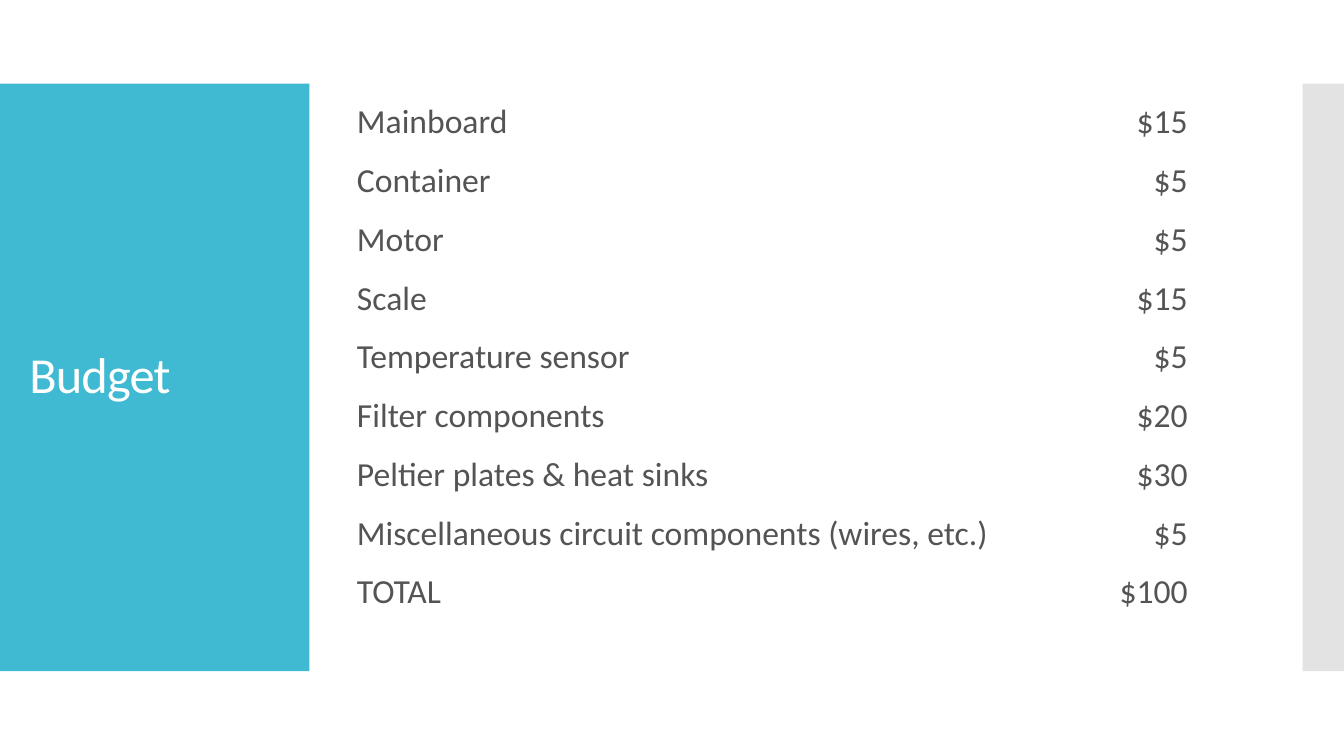
"""Build the project budget slide."""
from lxml.etree import SubElement
from pptx import Presentation
from pptx.dml.color import RGBColor
from pptx.enum.shapes import MSO_SHAPE
from pptx.enum.text import MSO_ANCHOR, PP_ALIGN
from pptx.oxml.ns import qn
from pptx.util import Inches, Pt

TEAL = RGBColor(0x40, 0xBA, 0xD2)
GRAY = RGBColor(0xC8, 0xC8, 0xC8)
WHITE = RGBColor(0xFF, 0xFF, 0xFF)
TEXT = RGBColor(0x54, 0x54, 0x54)

BUDGET = [
    ("Mainboard", "$15"),
    ("Container", "$5"),
    ("Motor", "$5"),
    ("Scale", "$15"),
    ("Temperature sensor", "$5"),
    ("Filter components", "$20"),
    ("Peltier plates & heat sinks", "$30"),
    ("Miscellaneous circuit components (wires, etc.)", "$5"),
    ("TOTAL", "$100"),
]


def write(tf, text, size=24, color=TEXT, font="Calibri", align=PP_ALIGN.LEFT,
          line_spacing=None, spacing=None):
    p = tf.paragraphs[0]
    p.alignment = align
    if line_spacing:
        p.line_spacing = line_spacing
    r = p.add_run()
    r.text = text
    r.font.size = Pt(size)
    r.font.name = font
    r.font.color.rgb = color
    if spacing:
        r.font._element.set("spc", str(round(spacing * 100)))


class BudgetSlide:
    def __init__(self, prs):
        self.slide = prs.slides.add_slide(prs.slide_layouts[5])
        self.shapes = self.slide.shapes

    def panel(self, left, top, width, height, color, alpha=None):
        sp = self.shapes.add_shape(MSO_SHAPE.RECTANGLE, Inches(left), Inches(top),
                                   Inches(width), Inches(height))
        sp.shadow.inherit = False
        sp.fill.solid()
        sp.fill.fore_color.rgb = color
        sp.line.fill.background()
        if alpha:
            clr = sp._element.spPr.find(qn("a:solidFill"))[0]
            SubElement(clr, qn("a:alpha")).set("val", str(alpha * 1000))
        self.shapes._spTree.insert(2, sp._element)

    def title(self, text, left, top, width, height):
        sp = self.shapes.title
        sp.left, sp.top = Inches(left), Inches(top)
        sp.width, sp.height = Inches(width), Inches(height)
        tf = sp.text_frame
        tf.word_wrap = True
        tf.vertical_anchor = MSO_ANCHOR.MIDDLE
        write(tf, text, size=36, color=WHITE, line_spacing=0.9, spacing=-0.6)

    def table(self, rows, left, top, widths, height):
        table = self.shapes.add_table(len(rows), len(widths), Inches(left), Inches(top),
                                      Inches(sum(widths)), Inches(height)).table
        table.first_row = False
        table.horz_banding = False
        for column, width in zip(table.columns, widths):
            column.width = Inches(width)
        for i, row in enumerate(rows):
            for j, (text, align) in enumerate(zip(row, (PP_ALIGN.LEFT, PP_ALIGN.RIGHT))):
                cell = table.cell(i, j)
                cell.fill.background()
                write(cell.text_frame, text, align=align)


def main():
    prs = Presentation()
    prs.slide_width, prs.slide_height = Inches(13.33), Inches(7.5)
    s = BudgetSlide(prs)
    s.panel(0, 0.83, 3.07, 5.83, TEAL)
    s.panel(12.92, 0.83, 0.41, 5.83, GRAY, alpha=50)
    s.title("Budget", 0.19, 1.23, 2.69, 5.03)
    s.table(BUDGET, 3.44, 0.96, (7.05, 1.39), 5.25)
    prs.save("out.pptx")


if __name__ == "__main__":
    main()
